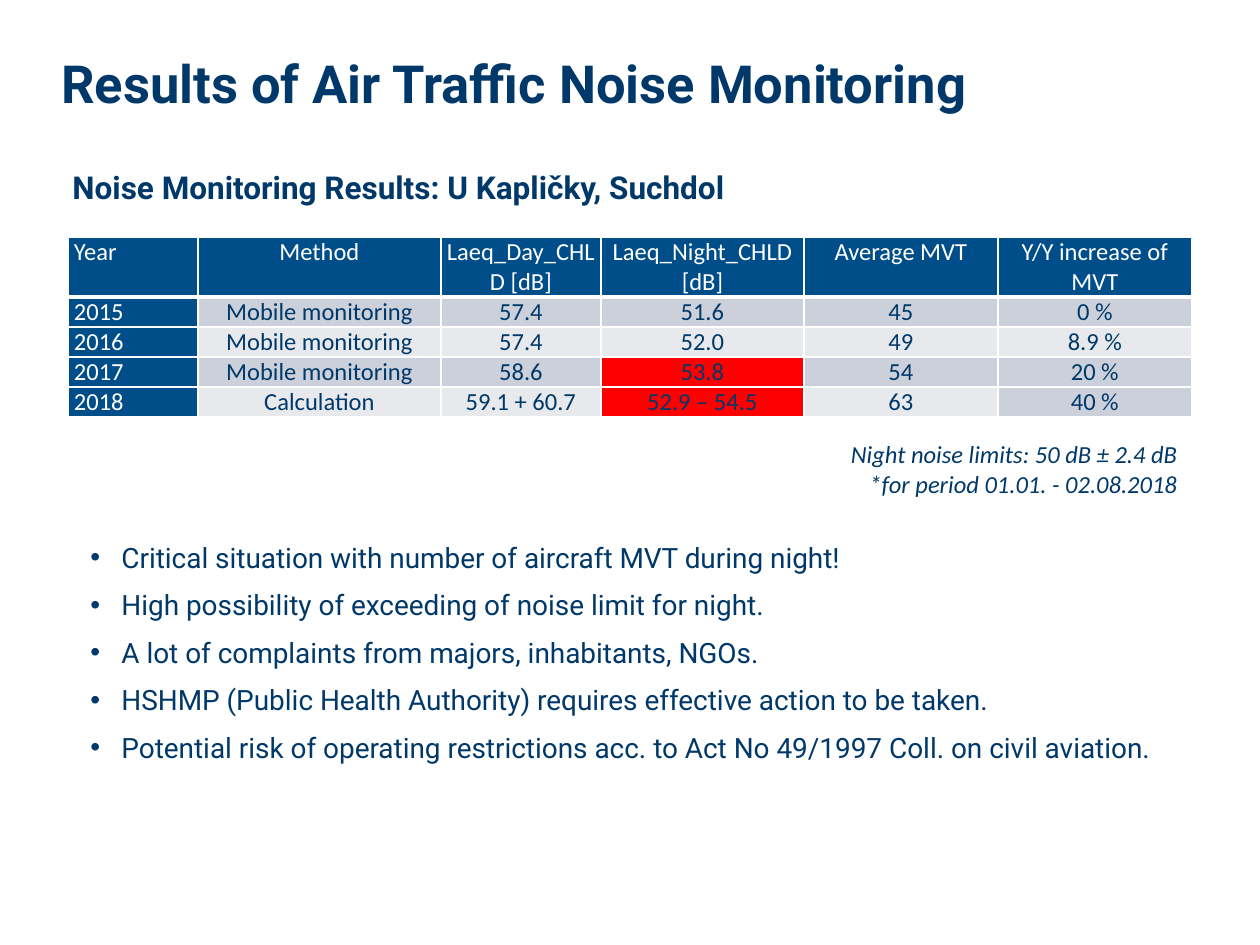
"""Build the slide on air traffic noise results."""
from dataclasses import dataclass
from lxml.etree import SubElement as Sub
from pptx import Presentation as Deck
from pptx.dml.color import RGBColor as Rgb
from pptx.enum.text import PP_ALIGN as Align
from pptx.oxml.ns import qn
from pptx.util import Pt


def px(num):
    return round(num * 914400 / 126)


@dataclass(frozen=True)
class Theme:
    ink: str = "003969"
    head: str = "004E89"
    dark: str = "CCD0DA"
    light: str = "E7E9ED"
    alert: str = "FF0000"
    white: str = "FFFFFF"
    sans: str = "Roboto"
    grid: str = "Calibri"
    title: int = 30
    sub: int = 18
    body: int = 16
    small: int = 14


def write(para, text, font, size, color, bold=False, italic=False,
          align=Align.LEFT, space=1.0, before=0, bullet=None):
    if bullet:
        props = para._p.get_or_add_pPr()
        props.set("marL", str(px(49)))
        props.set("indent", str(-px(31)))
        Sub(props, qn("a:buFont")).set("typeface", "Arial")
        Sub(props, qn("a:buChar")).set("char", bullet)
    para.alignment = align
    para.line_spacing = space
    para.space_before = Pt(before)
    run = para.add_run()
    run.text = text
    face = run.font
    face.name, face.size = font, Pt(size)
    face.bold, face.italic = bold, italic
    face.color.rgb = Rgb.from_string(color)


class Page:
    def __init__(self, slide, theme):
        self.slide = slide
        self.theme = theme

    def text(self, box, lines, before=0, **form):
        frame = self.slide.shapes.add_textbox(*map(px, box)).text_frame
        frame.word_wrap = True
        for i, line in enumerate(lines):
            para = frame.add_paragraph() if i else frame.paragraphs[0]
            write(para, line, color=self.theme.ink,
                  before=before if i else 0, **form)

    def border(self, cell, **widths):
        props = cell._tc.get_or_add_tcPr()
        for side in "LRTB":
            line = Sub(props, qn("a:ln" + side))
            line.set("w", str(Pt(widths.get(side, 1))))
            fill = Sub(line, qn("a:solidFill"))
            Sub(fill, qn("a:srgbClr")).set("val", self.theme.white)

    def cell(self, cell, text, fill, color, align, **widths):
        self.border(cell, **widths)
        cell.fill.solid()
        cell.fill.fore_color.rgb = Rgb.from_string(fill)
        cell.margin_left = cell.margin_right = px(6)
        cell.margin_top = cell.margin_bottom = 0
        write(cell.text_frame.paragraphs[0], text, font=self.theme.grid,
              size=self.theme.small, color=color, align=align)

    def table(self, left, top, cols, highs, rows, marks):
        look = self.theme
        grid = self.slide.shapes.add_table(
            len(rows), len(cols), px(left), px(top),
            px(sum(cols)), px(sum(highs))).table
        grid.horz_banding = False
        for col, wide in zip(grid.columns, cols):
            col.width = px(wide)
        for r, row in enumerate(rows):
            grid.rows[r].height = px(highs[r])
            edge = {0: {"B": 3}, 1: {"T": 3}}.get(r, {})
            band = look.dark if r % 2 else look.light
            for c, text in enumerate(row):
                lead = r == 0 or c == 0
                fill = look.head if lead else marks.get((r, c), band)
                self.cell(grid.cell(r, c), text, fill,
                          look.white if lead else look.ink,
                          Align.CENTER if c else Align.JUSTIFY, **edge)


ROWS = [
    ("Year", "Method", "Laeq_Day_CHLD [dB]", "Laeq_Night_CHLD [dB]",
     "Average MVT", "Y/Y increase of MVT"),
    ("2015", "Mobile monitoring", "57.4", "51.6", "45", "0 %"),
    ("2016", "Mobile monitoring", "57.4", "52.0", "49", "8.9 %"),
    ("2017", "Mobile monitoring", "58.6", "53.8", "54", "20 %"),
    ("2018", "Calculation", "59.1 + 60.7", "52.9 – 54.5", "63", "40 %"),
]
POINTS = [
    "Critical situation with number of aircraft MVT during night!",
    "High possibility of exceeding of noise limit for night.",
    "A lot of complaints from majors, inhabitants, NGOs.",
    "HSHMP (Public Health Authority) requires effective action to be taken.",
    "Potential risk of operating restrictions acc. to Act No 49/1997 Coll. "
    "on civil aviation.",
]
NOTES = ["Night noise limits: 50 dB ± 2.4 dB",
         "*for period 01.01. - 02.08.2018"]


def main():
    deck = Deck()
    deck.slide_width, deck.slide_height = px(1260), px(945)
    look = Theme()
    page = Page(deck.slides.add_slide(deck.slide_layouts[6]), look)
    page.text((49, 32, 1162, 100), ["Results of Air Traffic Noise Monitoring"],
              font=look.sans, size=look.title, bold=True, space=1.2)
    page.text((60, 154, 1142, 56),
              ["Noise Monitoring Results: U Kapličky, Suchdol"],
              font=look.sans, size=look.sub, bold=True, space=1.2,
              align=Align.JUSTIFY)
    page.table(68, 237, (130, 243, 160, 203, 194, 194), [60] + [30] * 4, ROWS,
               {(3, 3): look.alert, (4, 3): look.alert, (4, 5): look.dark})
    page.text((525, 433, 665, 102), NOTES, font=look.grid, size=look.small,
              italic=True, align=Align.RIGHT)
    page.text((60, 531, 1142, 375), POINTS, font=look.sans, size=look.body,
              align=Align.JUSTIFY, space=1.1, before=6, bullet="•")
    deck.save("out.pptx")


if __name__ == "__main__":
    main()
